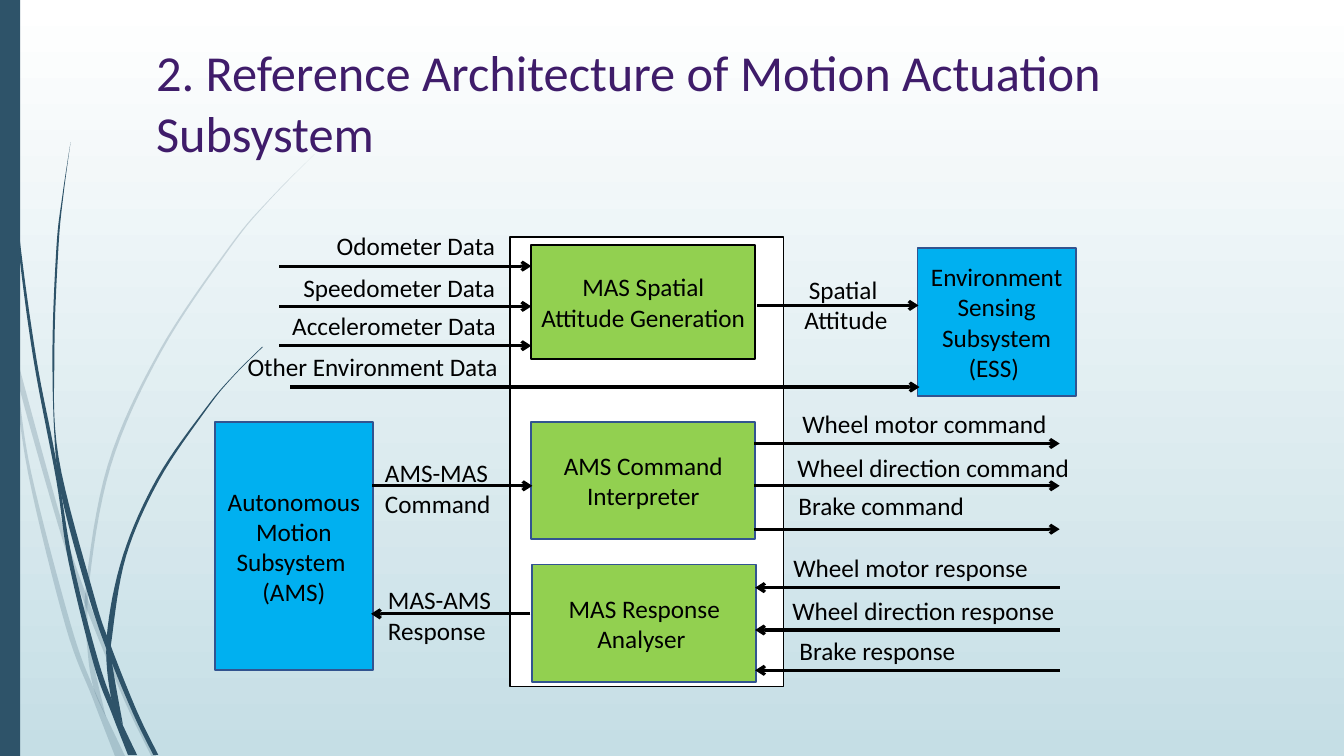
"""Build the slide on the reference architecture of the Motion Actuation Subsystem."""
from pptx import Presentation
from pptx import util as u
from pptx.dml.color import RGBColor
from pptx.enum import shapes, text
from pptx.oxml import ns, xmlchemy

PX = 9144
FONT = "Calibri"
BLACK = RGBColor(0x00, 0x00, 0x00)
WHITE = RGBColor(0xFF, 0xFF, 0xFF)
MIST = RGBColor(0xC5, 0xDE, 0xE5)
SLATE = RGBColor(0x2E, 0x53, 0x69)
BLUE = RGBColor(0x00, 0xB0, 0xF0)
GREEN = RGBColor(0x92, 0xD0, 0x50)
NAVY = RGBColor(0x32, 0x54, 0x90)
PLUM = RGBColor(0x3F, 0x1C, 0x6A)
LEFT, MID = text.PP_ALIGN.LEFT, text.PP_ALIGN.CENTER

PALE = [
    ([(0, 299), (11, 350), (28, 470), (65, 621), (92, 693), (114, 750)],
     [(0, 282), (9, 322), (17, 376), (31, 469), (70, 619), (93, 683), (124, 750)]),
    ([(14, 345), (17, 376), (58, 522), (84, 599), (123, 694), (150, 750)],
     [(14, 345), (62, 520), (92, 607), (127, 692), (155, 750)]),
    ([(312, 153), (268, 197), (228, 244), (158, 348), (107, 461), (85, 584),
      (87, 646), (93, 683), (105, 711)],
     [(312, 153), (268, 198), (229, 245), (160, 349), (110, 462), (88, 584),
      (91, 646), (105, 711)]),
]
DARK = [
    ([(3, 0), (7, 110), (17, 233), (33, 355), (56, 477), (68, 557), (93, 659),
      (111, 708), (127, 749)],
     [(4, 0), (8, 109), (19, 232), (36, 355), (55, 453), (72, 556), (98, 657),
      (116, 706), (136, 749)]),
    ([(70, 141), (62, 193), (56, 245), (52, 349), (55, 449), (64, 505), (88, 592),
      (106, 645), (132, 708), (152, 749)],
     [(70, 141), (63, 193), (58, 245), (54, 349), (58, 453), (93, 590), (110, 641),
      (136, 706), (157, 749)]),
    ([(260, 344), (231, 373), (204, 405), (156, 474), (122, 551), (106, 631),
      (110, 691), (122, 719)],
     [(261, 344), (231, 374), (205, 406), (158, 476), (125, 552), (111, 633),
      (111, 656), (122, 719)]),
]
BOXES = [
    ((506, 235, 271, 446), WHITE, BLACK, 1, []),
    ((213, 419, 157, 246), BLUE, NAVY, 1.25, ["Autonomous Motion Subsystem ", "(AMS)"]),
    ((910, 246, 157, 147), BLUE, NAVY, 1.25, ["Environment Sensing Subsystem (ESS) "]),
    ((527, 243, 222, 113), GREEN, BLACK, 1.25, ["MAS Spatial Attitude Generation"]),
    ((527, 419, 222, 116), GREEN, NAVY, 1.25, ["AMS Command Interpreter"]),
    ((528, 560, 222, 117), GREEN, NAVY, 1.25, ["MAS Response Analyser "]),
]
LABELS = [
    ((324, 224, 185, 40), LEFT, ["Odometer Data"]),
    ((291, 265, 218, 40), LEFT, ["Speedometer Data"]),
    ((280, 303, 230, 40), LEFT, ["Accelerometer Data"]),
    ((234, 344, 271, 40), MID, ["Other Environment Data"]),
    ((372, 449, 136, 71), LEFT, ["AMS-MAS Command"]),
    ((375, 575, 126, 71), LEFT, ["MAS-AMS Response"]),
    ((787, 267, 104, 71), MID, ["Spatial ", "Attitude"]),
    ((786, 400, 346, 40), LEFT, ["Wheel motor command"]),
    ((781, 444, 365, 40), LEFT, ["Wheel direction command"]),
    ((782, 482, 234, 40), LEFT, ["Brake command"]),
    ((777, 543, 344, 40), LEFT, ["Wheel motor response"]),
    ((776, 586, 363, 40), LEFT, ["Wheel direction response"]),
    ((783, 625, 233, 40), LEFT, ["Brake response"]),
]
FLOWS = [
    (277, 527, [264, 304, 343]),
    (288, 912, [384]),
    (751, 911, [303]),
    (369, 528, [482]),
    (526, 368, [609]),
    (748, 1051, [440, 482, 525]),
    (1051, 749, [583, 625, 665]),
]


def emu(nums):
    """Turn px lengths into EMU."""
    return [round(n * PX) for n in nums]


def curve(pts, steps=8):
    """Return points on a smooth curve through the given ones."""
    ends = [pts[0]] + pts + [pts[-1]]
    out = [pts[0]]
    for a, b, c, d in zip(ends, ends[1:], ends[2:], ends[3:]):
        for k in range(1, steps + 1):
            t = k / steps
            out.append(tuple(
                (2 * q + (r - p) * t + (2 * p - 5 * q + 4 * r - s) * t ** 2
                 + (3 * q - p - 3 * r + s) * t ** 3) / 2
                for p, q, r, s in zip(a, b, c, d)))
    return out


def blade(slide, left, right, alpha=None):
    """Draw a grass blade between two edges."""
    pts = [emu(p) for p in curve(left) + curve(right)[::-1]]
    form = slide.shapes.build_freeform(*pts[0], scale=1.0)
    form.add_line_segments(pts[1:], close=True)
    shape = form.convert_to_shape()
    shape.shadow.inherit = False
    shape.fill.solid()
    shape.fill.fore_color.rgb = SLATE
    shape.line.fill.background()
    if alpha:
        tone = shape._element.spPr.find(".//" + ns.qn("a:srgbClr"))
        tone.append(xmlchemy.OxmlElement("a:alpha"))
        tone[-1].set("val", str(alpha * 1000))


def write(shape, lines, align=LEFT, size=18, color=BLACK, anchor=text.MSO_ANCHOR.TOP):
    """Put lines of text into a shape."""
    frame = shape.text_frame
    frame.word_wrap = True
    frame.vertical_anchor = anchor
    for i, line in enumerate(lines):
        para = frame.add_paragraph() if i else frame.paragraphs[0]
        para.alignment = align
        run = para.add_run()
        run.text = line
        run.font.name = FONT
        run.font.size = u.Pt(size)
        run.font.color.rgb = color


def box(slide, area, fill, edge=None, width=1, lines=()):
    """Draw a filled box with centred text."""
    shape = slide.shapes.add_shape(shapes.MSO_SHAPE.RECTANGLE, *emu(area))
    shape.shadow.inherit = False
    shape.fill.solid()
    shape.fill.fore_color.rgb = fill
    if edge is None:
        shape.line.fill.background()
    else:
        shape.line.color.rgb = edge
        shape.line.width = u.Pt(width)
    write(shape, lines, MID, anchor=text.MSO_ANCHOR.MIDDLE)


def label(slide, area, align, lines, **style):
    """Place a text label."""
    write(slide.shapes.add_textbox(*emu(area)), lines, align, **style)


def arrow(slide, start, end, y):
    """Draw a level arrow."""
    line = slide.shapes.add_connector(
        shapes.MSO_CONNECTOR.STRAIGHT, *emu((start, y, end, y)))
    line.line.color.rgb = BLACK
    line.line.width = u.Pt(2.25)
    tip = xmlchemy.OxmlElement("a:tailEnd")
    tip.set("type", "arrow")
    line.line._get_or_add_ln().append(tip)
    line._element.spPr.append(xmlchemy.OxmlElement("a:effectLst"))


def paint(slide):
    """Fill the background from white down to mist."""
    fill = slide.background.fill
    fill.gradient()
    fill.gradient_angle = 270
    for stop, color, pos in zip(fill.gradient_stops, (WHITE, MIST), (0, 1)):
        stop.color.rgb = color
        stop.position = pos


def main():
    """Build and save the slide."""
    deck = Presentation()
    deck.slide_width, deck.slide_height = emu((1333, 750))
    slide = deck.slides.add_slide(deck.slide_layouts[6])
    paint(slide)
    for left, right in PALE:
        blade(slide, left, right, 20)
    for left, right in DARK:
        blade(slide, left, right)
    box(slide, (0, 0, 20, 750), SLATE)
    for item in BOXES:
        box(slide, *item)
    for item in LABELS:
        label(slide, *item)
    for start, end, rows in FLOWS:
        for y in rows:
            arrow(slide, start, end, y)
    label(slide, (145, 31, 1114, 140), LEFT,
          ["2. Reference Architecture of Motion Actuation Subsystem"],
          size=36, color=PLUM, anchor=text.MSO_ANCHOR.MIDDLE)
    deck.save("out.pptx")


if __name__ == "__main__":
    main()
